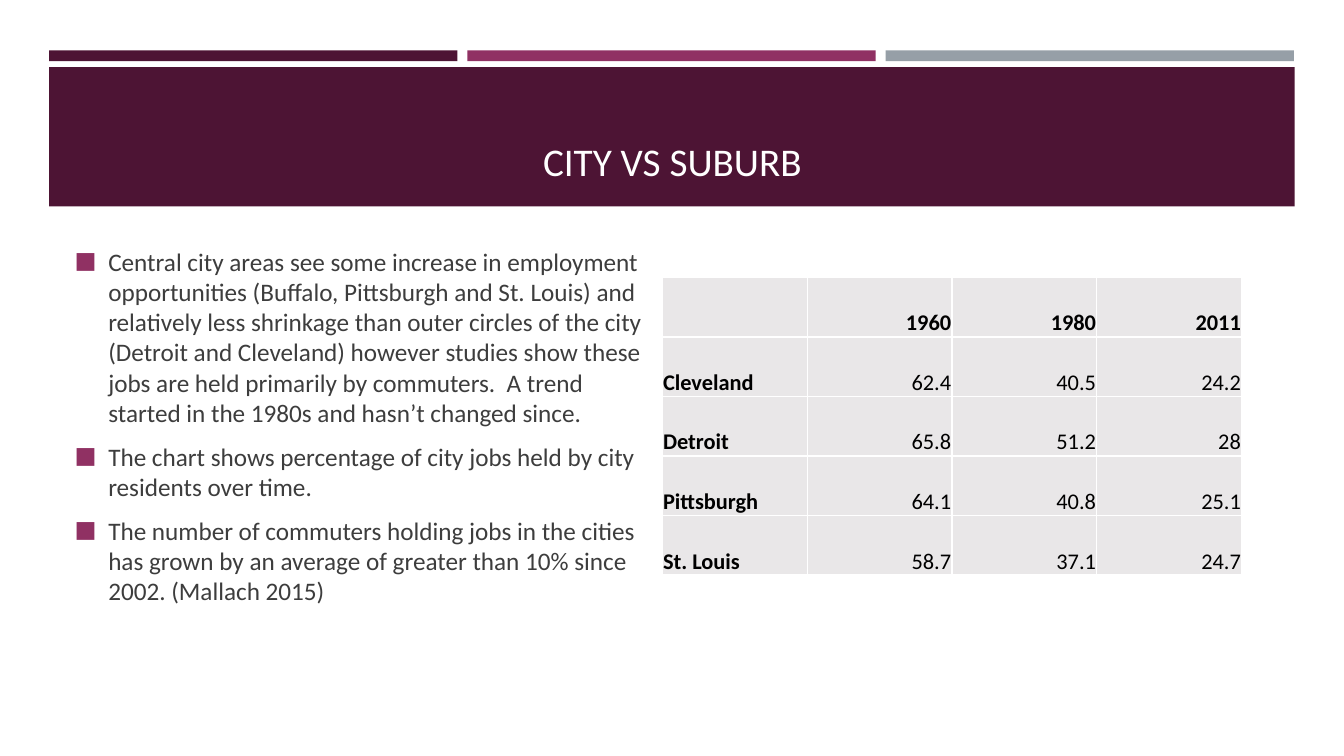
from lxml import etree
from pptx import Presentation, util as u
from pptx.dml.color import RGBColor
from pptx.enum import shapes, text
from pptx.oxml import ns

PLUM = RGBColor(0x4D, 0x14, 0x34)
BERRY = RGBColor(0x90, 0x31, 0x63)
SLATE = RGBColor(0x96, 0x9F, 0xA7)
CHARCOAL = RGBColor(0x3D, 0x3D, 0x3D)
PALE = RGBColor(0xE9, 0xE7, 0xE8)
WHITE = RGBColor(0xFF, 0xFF, 0xFF)
BLACK = RGBColor(0, 0, 0)

POINTS = [
    "Central city areas see some increase in employment opportunities "
    "(Buffalo, Pittsburgh and St. Louis) and relatively less shrinkage than "
    "outer circles of the city (Detroit and Cleveland) however studies show "
    "these jobs are held primarily by commuters.  A trend started in the "
    "1980s and hasn’t changed since.",
    "The chart shows percentage of city jobs held by city residents over time.",
    "The number of commuters holding jobs in the cities has grown by an "
    "average of greater than 10% since 2002. (Mallach 2015)",
]
JOBS = [
    ["", "1960", "1980", "2011"],
    ["Cleveland", "62.4", "40.5", "24.2"],
    ["Detroit", "65.8", "51.2", "28"],
    ["Pittsburgh", "64.1", "40.8", "25.1"],
    ["St. Louis", "58.7", "37.1", "24.7"],
]


def write(p, words, font="Calibri", size=18, color=BLACK, bold=False,
          align=text.PP_ALIGN.LEFT, after=0):
    p.alignment = align
    p.space_after = u.Pt(after)
    r = p.add_run()
    r.text = words
    r.font.name = font
    r.font.size = u.Pt(size)
    r.font.bold = bold
    r.font.color.rgb = color


def add_xml(parent, tag, **attrs):
    return etree.SubElement(parent, ns.qn(tag), attrs)


class Deck:
    font = "Calibri"

    def __init__(self, s):
        self.s = s

    def bar(self, x, y, w, h, color):
        sp = self.s.shapes.add_shape(
            shapes.MSO_SHAPE.RECTANGLE, u.Cm(x), u.Cm(y), u.Cm(w), u.Cm(h))
        sp.shadow.inherit = False
        sp.fill.solid()
        sp.fill.fore_color.rgb = color
        sp.line.fill.background()

    def box(self, x, y, w, h, anchor):
        tf = self.s.shapes.add_textbox(
            u.Cm(x), u.Cm(y), u.Cm(w), u.Cm(h)).text_frame
        tf.word_wrap = True
        tf.vertical_anchor = anchor
        return tf

    def title(self, words, x, y, w, h):
        tf = self.box(x, y, w, h, text.MSO_ANCHOR.BOTTOM)
        write(tf.paragraphs[0], words, font=self.font, size=28, color=WHITE,
              align=text.PP_ALIGN.CENTER)

    def bullets(self, points, x, y, w, h):
        tf = self.box(x, y, w, h, text.MSO_ANCHOR.TOP)
        tf.margin_top = 0
        for i, point in enumerate(points):
            p = tf.add_paragraph() if i else tf.paragraphs[0]
            write(p, point, font=self.font, color=CHARCOAL, after=9.6)
            pPr = p._p.get_or_add_pPr()
            indent = u.Cm(0.85)
            pPr.set("marL", str(indent))
            pPr.set("indent", str(-indent))
            add_xml(add_xml(pPr, "a:buClr"), "a:srgbClr", val=str(BERRY))
            add_xml(pPr, "a:buSzPct", val="92000")
            add_xml(pPr, "a:buFont", typeface=self.font)
            add_xml(pPr, "a:buChar", char="■")

    def table(self, rows, x, y, col_w, row_h):
        n, m = len(rows), len(rows[0])
        table = self.s.shapes.add_table(
            n, m, u.Cm(x), u.Cm(y), u.Cm(m * col_w), u.Cm(n * row_h)).table
        for col in table.columns:
            col.width = u.Cm(col_w)
        for i, row in enumerate(rows):
            table.rows[i].height = u.Cm(row_h)
            for j, words in enumerate(row):
                self.cell(table.cell(i, j), words, bold=i == 0 or j == 0,
                          align=text.PP_ALIGN.RIGHT if j else text.PP_ALIGN.LEFT)

    def cell(self, cell, words, bold, align):
        cell.margin_left = cell.margin_right = cell.margin_top = u.Cm(0.02)
        cell.margin_bottom = 0
        cell.vertical_anchor = text.MSO_ANCHOR.BOTTOM
        if words:
            write(cell.text_frame.paragraphs[0], words, font=self.font,
                  size=16, bold=bold, align=align)
        tcPr = cell._tc.get_or_add_tcPr()
        for side in ("a:lnL", "a:lnR", "a:lnT", "a:lnB"):
            ln = add_xml(tcPr, side, w=str(u.Pt(1)))
            add_xml(add_xml(ln, "a:solidFill"), "a:srgbClr", val=str(WHITE))
        add_xml(add_xml(tcPr, "a:solidFill"), "a:srgbClr", val=str(PALE))


def main():
    prs = Presentation()
    prs.slide_width, prs.slide_height = u.Cm(33.87), u.Cm(19.05)
    deck = Deck(prs.slides.add_slide(prs.slide_layouts[6]))
    for i, color in enumerate((PLUM, BERRY, SLATE)):
        deck.bar(1.24 + i * 10.54, 1.27, 10.29, 0.27, color)
    deck.bar(1.24, 1.69, 31.39, 3.51, PLUM)
    deck.title("CITY VS SUBURB", 1.63, 2.03, 30.63, 2.74)
    deck.bullets(POINTS, 1.63, 6.2, 15.06, 10.08)
    deck.table(JOBS, 16.69, 6.99, 3.65, 1.5)
    prs.save("out.pptx")


if __name__ == "__main__":
    main()
